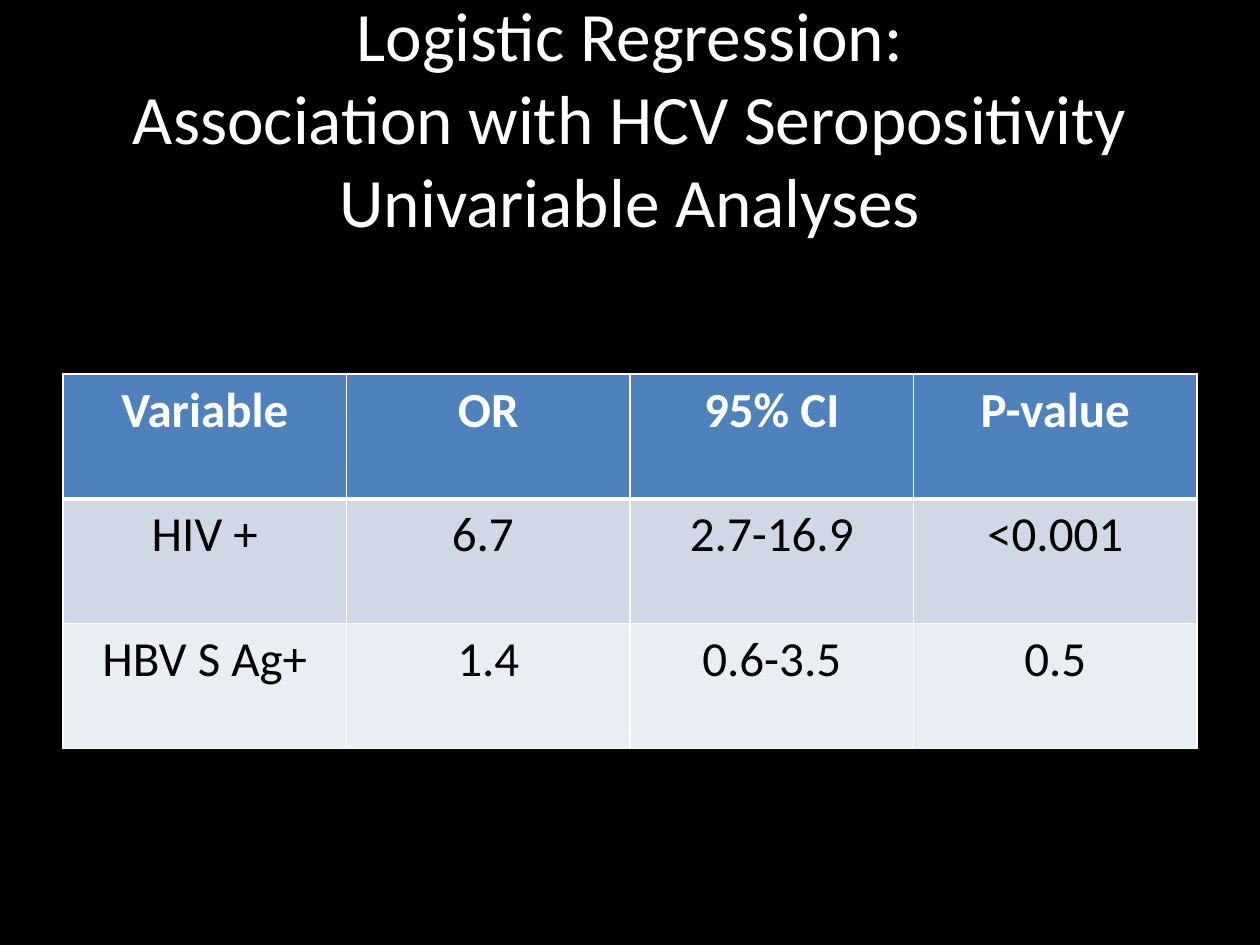
from lxml import etree
from pptx import Presentation
from pptx import util as u
from pptx.dml.color import RGBColor
from pptx.enum import text
from pptx.oxml import ns

TITLE = "Logistic Regression:\nAssociation with HCV Seropositivity\nUnivariable Analyses"
ROWS = [
    ("Variable", "OR", "95% CI", "P-value"),
    ("HIV +", "6.7 ", "2.7-16.9", "<0.001"),
    ("HBV S Ag+", "1.4", "0.6-3.5", "0.5"),
]
COLORS = {"back": "000000", "light": "FFFFFF", "dark": "000000",
          "head": "4F81BD", "odd": "D0D8E8", "even": "E9EDF4"}
WIDTH, HEIGHT = 10, 7.5
MARGIN = WIDTH * 0.05
SPAN = WIDTH - 2 * MARGIN
TITLE_TOP, TITLE_HEIGHT = HEIGHT * 0.04, HEIGHT / 6
TABLE_TOP, ROW_HEIGHT = 2.97, 0.99
THIN, THICK = 1, 3


def rgb(name):
    return RGBColor.from_string(COLORS[name])


def write(tf, content, color, **formats):
    p = tf.paragraphs[0]
    p.text = content
    p.alignment = text.PP_ALIGN.CENTER
    for r in p.runs:
        for name, value in {"name": "Calibri", **formats}.items():
            setattr(r.font, name, value)
        r.font.color.rgb = rgb(color)


def add_borders(cell, widths):
    """Draw white cell edges; widths maps L, R, T, B to points, in that order."""
    props = cell._tc.get_or_add_tcPr()
    for side, width in widths.items():
        line = etree.SubElement(props, ns.qn(f"a:ln{side}"), w=str(u.Pt(width)))
        fill = etree.SubElement(line, ns.qn("a:solidFill"))
        etree.SubElement(fill, ns.qn("a:srgbClr"), val=COLORS["light"])


prs = Presentation()
prs.slide_width, prs.slide_height = u.Inches(WIDTH), u.Inches(HEIGHT)
s = prs.slides.add_slide(prs.slide_layouts[6])
s.background.fill.solid()
s.background.fill.fore_color.rgb = rgb("back")

title = s.shapes.add_textbox(*map(u.Inches, (MARGIN, TITLE_TOP, SPAN, TITLE_HEIGHT)))
tf = title.text_frame
tf.word_wrap = True
tf.vertical_anchor = text.MSO_ANCHOR.MIDDLE
write(tf, TITLE, "light", size=u.Pt(39.6))

frame = s.shapes.add_table(
    len(ROWS), len(ROWS[0]),
    *map(u.Inches, (MARGIN, TABLE_TOP, SPAN, ROW_HEIGHT * len(ROWS))))
for i, row in enumerate(ROWS):
    is_head = i == 0
    fill = "head" if is_head else "odd" if i % 2 else "even"
    for j, value in enumerate(row):
        cell = frame.table.cell(i, j)
        write(cell.text_frame, value, "light" if is_head else "dark",
              size=u.Pt(28), bold=is_head)
        add_borders(cell, {"L": THIN, "R": THIN, "T": THICK if i == 1 else THIN,
                           "B": THICK if is_head else THIN})
        cell.fill.solid()
        cell.fill.fore_color.rgb = rgb(fill)

prs.save("out.pptx")
